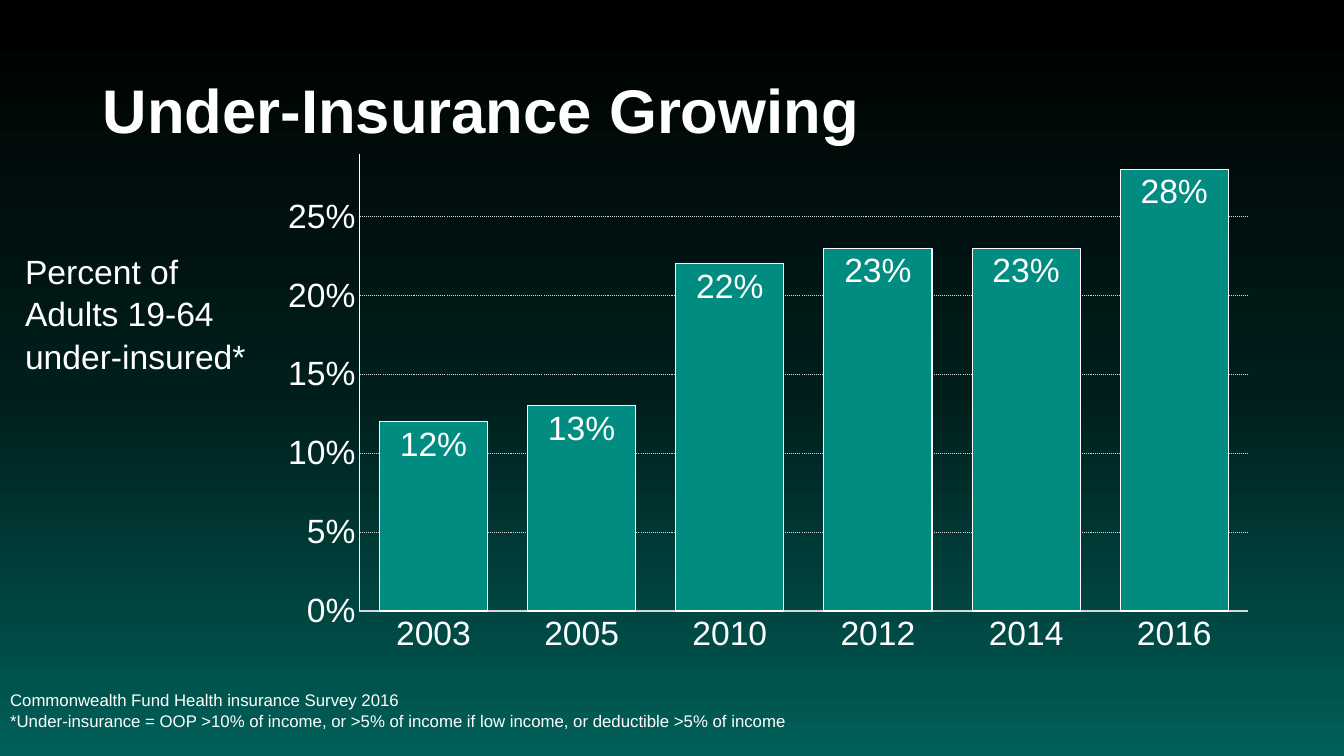
from lxml.etree import SubElement
from pptx import Presentation
from pptx.chart.data import CategoryChartData
from pptx.dml.color import RGBColor
from pptx.enum.chart import XL_CHART_TYPE, XL_LABEL_POSITION, XL_TICK_MARK
from pptx.enum.dml import MSO_LINE
from pptx.enum.text import MSO_ANCHOR, MSO_AUTO_SIZE, PP_ALIGN
from pptx.oxml.ns import qn
from pptx.util import Inches, Pt

WHITE, GREY, TEAL = "FFFFFF", "D9D9D9", "008C81"
RATES = {"2003": 0.12, "2005": 0.13, "2010": 0.22,
         "2012": 0.23, "2014": 0.23, "2016": 0.28}


def paint(target, color):
    """Give a fill or line format a solid colour."""
    target.solid()
    target.fore_color.rgb = RGBColor.from_string(color)


def style(font, size, bold=False, color=WHITE):
    font.name, font.size, font.bold = "Arial", Pt(size), bold
    font.color.rgb = RGBColor.from_string(color)


def rule(line, color):
    paint(line.fill, color)
    line.width = Pt(0.75)


def place(shape, left, top, width, height):
    shape.left, shape.top = Inches(left), Inches(top)
    shape.width, shape.height = Inches(width), Inches(height)


def write(shape, *lines, size, bold=False, spacing=1.0, anchor=MSO_ANCHOR.MIDDLE):
    """Write one plain, left-aligned paragraph per line."""
    frame = shape.text_frame
    frame.text = "\n".join(lines)
    frame.word_wrap = True
    frame.auto_size = MSO_AUTO_SIZE.NONE
    frame.vertical_anchor = anchor
    for para in frame.paragraphs:
        props = para._p.get_or_add_pPr()
        props.set("marL", "0")
        props.set("indent", "0")
        SubElement(props, qn("a:buNone"))
        para.alignment = PP_ALIGN.LEFT
        para.line_spacing = spacing
        para.space_before = Pt(0)
        for run in para.runs:
            style(run.font, size, bold)


def shade(slide, stops):
    """Fill the background with a gradient running from top to bottom."""
    fill = slide.background.fill
    fill.gradient()
    fill.gradient_angle = 270
    holder = next(slide.element.iter(qn("a:gsLst")))
    holder.clear()
    for percent, color in stops:
        stop = SubElement(holder, qn("a:gs"), pos=str(percent * 1000))
        SubElement(stop, qn("a:srgbClr"), val=color)


def set_axis(axis, color):
    axis.major_tick_mark = axis.minor_tick_mark = XL_TICK_MARK.NONE
    style(axis.tick_labels.font, 24)
    rule(axis.format.line, color)


def add_bars(slide, rates):
    data = CategoryChartData(number_format="0%")
    data.categories = list(rates)
    data.add_series("Series 1", list(rates.values()))
    chart = slide.shapes.add_chart(
        XL_CHART_TYPE.COLUMN_CLUSTERED, Inches(2.66), Inches(1.42),
        Inches(9.92), Inches(5.16), data).chart
    chart.has_legend = chart.has_title = False
    style(chart.font, 24)

    # Axes and grid
    set_axis(chart.category_axis, GREY)
    axis = chart.value_axis
    set_axis(axis, WHITE)
    axis.minimum_scale, axis.maximum_scale, axis.major_unit = 0, 0.29, 0.05
    axis.tick_labels.number_format = "0%"
    axis.tick_labels.number_format_is_linked = False
    grid = axis.major_gridlines.format.line
    rule(grid, GREY)
    grid.dash_style = MSO_LINE.ROUND_DOT

    # Columns and their labels
    plot = chart.plots[0]
    plot.gap_width, plot.overlap = 37, -27
    plot.vary_by_categories = False
    bars = plot.series[0]
    paint(bars.format.fill, TEAL)
    rule(bars.format.line, WHITE)
    labels = bars.data_labels
    labels.show_value = True
    labels.position = XL_LABEL_POSITION.INSIDE_END
    style(labels.font, 24)


def main():
    deck = Presentation()
    deck.slide_width, deck.slide_height = Inches(13.33), Inches(7.5)
    slide = deck.slides.add_slide(deck.slide_layouts[1])
    shade(slide, [(0, "000000"), (52, "001E1C"), (100, "006059")])

    # Title
    title = slide.shapes.title
    place(title, 0.92, 0.4, 11.5, 1.45)
    write(title, "Under-Insurance Growing", size=44, bold=True, spacing=0.9)

    # Source notes
    notes = slide.placeholders[1]
    place(notes, 0, 6.58, 9, 0.92)
    write(notes, "Commonwealth Fund Health insurance Survey 2016",
          "*Under-insurance = OOP >10% of income, or >5% of income if low income, "
          "or deductible >5% of income", size=12, spacing=1.05)

    # Chart with its side label
    label = slide.shapes.add_textbox(
        Inches(0.15), Inches(2.42), Inches(2.51), Inches(1.31))
    write(label, "Percent of Adults 19-64 under-insured*", size=24,
          spacing=1.05, anchor=MSO_ANCHOR.TOP)
    add_bars(slide, RATES)

    deck.save("out.pptx")


if __name__ == "__main__":
    main()
